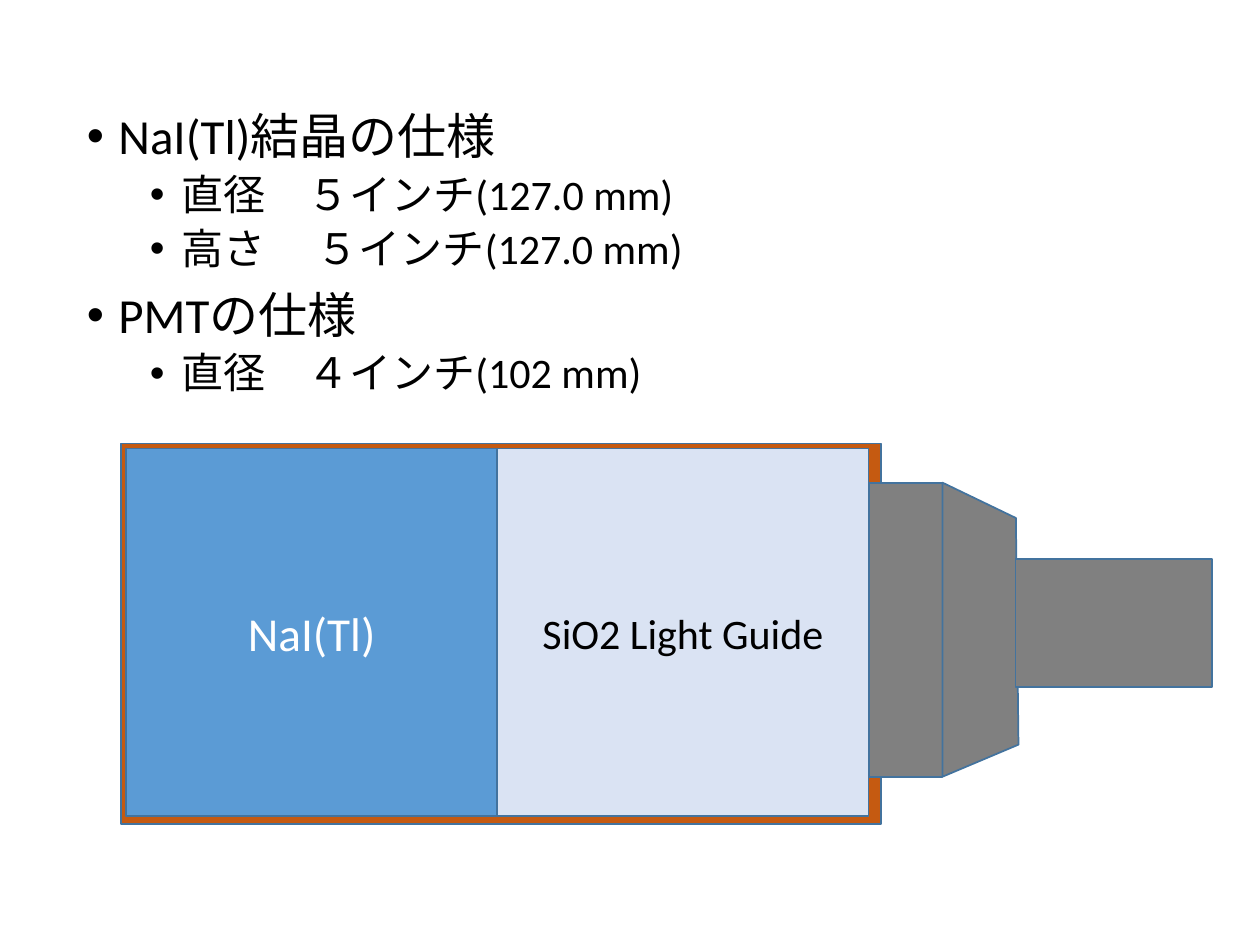
from dataclasses import dataclass

from lxml import etree
from pptx import Presentation
from pptx.dml.color import RGBColor
from pptx.enum.lang import MSO_LANGUAGE_ID
from pptx.enum.shapes import MSO_SHAPE
from pptx.enum.text import MSO_ANCHOR, MSO_AUTO_SIZE, PP_ALIGN
from pptx.oxml.ns import qn
from pptx.util import Pt

RECTANGLE = MSO_SHAPE.RECTANGLE
MIDDLE, TOP = MSO_ANCHOR.MIDDLE, MSO_ANCHOR.TOP
CENTER, LEFT = PP_ALIGN.CENTER, PP_ALIGN.LEFT
NO_AUTOFIT = MSO_AUTO_SIZE.NONE
JAPANESE = MSO_LANGUAGE_ID.JAPANESE
TITLE_AND_CONTENT = 1


@dataclass(frozen=True)
class Theme:
    font: str = "Calibri"
    text: str = "000000"
    inverse_text: str = "FFFFFF"
    outline: str = "43739E"
    housing: str = "C55A11"
    crystal: str = "5B9BD5"
    light_guide: str = "DAE3F3"
    tube: str = "808080"
    heading_size: int = 28
    detail_size: int = 24
    crystal_size: int = 27


THEME = Theme()

SPECIFICATIONS = [
    (0, "NaI(Tl)結晶の仕様"),
    (1, "直径　５インチ(127.0 mm)"),
    (1, "高さ　 ５インチ(127.0 mm)"),
    (0, "PMTの仕様"),
    (1, "直径　４インチ(102 mm)"),
]


def write_text(paragraph, text, size, color=THEME.text, align=LEFT):
    paragraph.alignment = align
    run = paragraph.add_run()
    run.text = text
    run.font.name = THEME.font
    run.font.size = Pt(size)
    run.font.color.rgb = RGBColor.from_string(color)
    run.font.language_id = JAPANESE


def set_bullet(paragraph, indent):
    properties = paragraph._p.get_or_add_pPr()
    properties.set("marL", str(Pt(indent)))
    properties.set("indent", str(Pt(-18)))
    etree.SubElement(properties, qn("a:buFont")).set("typeface", "Arial")
    etree.SubElement(properties, qn("a:buChar")).set("char", "•")


def style_shape(shape, fill):
    shape.shadow.inherit = False
    shape.fill.solid()
    shape.fill.fore_color.rgb = RGBColor.from_string(fill)
    shape.line.color.rgb = RGBColor.from_string(THEME.outline)
    shape.line.width = Pt(1)


def add_block(slide, left, top, width, height, fill):
    shape = slide.shapes.add_shape(RECTANGLE, Pt(left), Pt(top), Pt(width), Pt(height))
    style_shape(shape, fill)
    return shape


def add_label(shape, text, **text_format):
    frame = shape.text_frame
    frame.word_wrap = True
    frame.vertical_anchor = MIDDLE
    write_text(frame.paragraphs[0], text, align=CENTER, **text_format)


def add_outline(slide, points, fill):
    start, *others = [(Pt(x), Pt(y)) for x, y in points]
    builder = slide.shapes.build_freeform(*start)
    builder.add_line_segments(others, close=True)
    style_shape(builder.convert_to_shape(), fill)


def draw_detector(slide):
    crystal_left, crystal_top, crystal_width, crystal_height = 72, 256.3, 212.2, 210.2
    guide_left = crystal_left + crystal_width
    tube_left, tube_top, tube_width, tube_height = 496.4, 275.8, 42.2, 168
    cone_left = tube_left + tube_width
    tube_bottom = tube_top + tube_height

    add_block(slide, 69.1, 253.4, 434.2, 217.4, THEME.housing)
    crystal = add_block(slide, crystal_left, crystal_top, crystal_width, crystal_height, THEME.crystal)
    add_label(crystal, "NaI(Tl)", size=THEME.crystal_size, color=THEME.inverse_text)
    add_block(slide, tube_left, tube_top, tube_width, tube_height, THEME.tube)
    cone = [(cone_left, tube_top), (580.5, 296), (582, 425.5), (cone_left, tube_bottom)]
    add_outline(slide, cone, THEME.tube)
    guide = add_block(slide, guide_left, crystal_top, crystal_width, crystal_height, THEME.light_guide)
    add_label(guide, "SiO2 Light Guide", size=THEME.detail_size)
    add_block(slide, 580.3, 319.5, 112.3, 73, THEME.tube)


def fill_specifications(body):
    body.left, body.top, body.width, body.height = Pt(42.5), Pt(60.5), Pt(828), Pt(342.7)
    frame = body.text_frame
    frame.word_wrap = True
    frame.auto_size = NO_AUTOFIT
    frame.vertical_anchor = TOP
    for index, (level, text) in enumerate(SPECIFICATIONS):
        paragraph = frame.add_paragraph() if index else frame.paragraphs[0]
        paragraph.level = level
        paragraph.line_spacing = 0.9
        paragraph.space_before = Pt(5 if level else 10)
        set_bullet(paragraph, 54 if level else 18)
        write_text(paragraph, text, THEME.detail_size if level else THEME.heading_size)


def main():
    presentation = Presentation()
    presentation.slide_width, presentation.slide_height = Pt(720), Pt(540)
    slide = presentation.slides.add_slide(presentation.slide_layouts[TITLE_AND_CONTENT])
    title, body = slide.shapes.title, slide.placeholders[1]
    shape_tree = title.element.getparent()
    shape_tree.remove(title.element)
    draw_detector(slide)
    fill_specifications(body)
    shape_tree.append(body.element)
    presentation.save("out.pptx")


if __name__ == "__main__":
    main()
